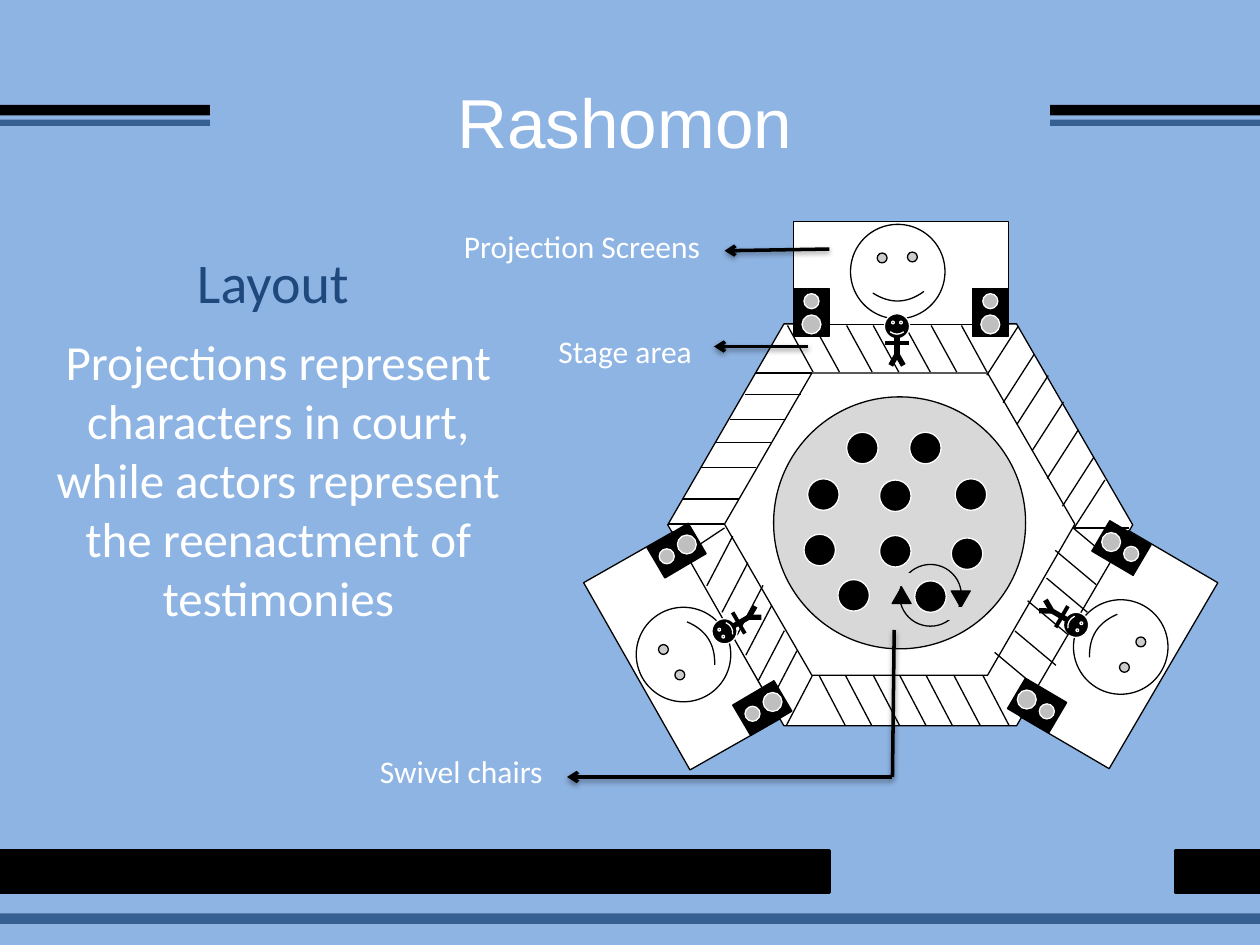
from math import cos, radians, sin

from lxml import etree
from pptx import Presentation
from pptx.dml.color import RGBColor
from pptx.enum import shapes, text
from pptx.oxml import ns
from pptx.util import Pt

COLORS = {
    "sky": "8EB4E3", "blue": "376092", "navy": "1F497D", "black": "000000",
    "white": "FFFFFF", "floor": "D8D8D8", "cone": "BFBFBF",
}
KIND = shapes.MSO_SHAPE

# Hatching of the stage: step of each line, then its starting points
HATCHES = [
    ((-15.1, -28.8), [(x, 414.7) for x in (483.1, 498.2, 514.1, 529.2, 544.3, 560.2, 576.7)]),
    ((14.8, -28.4), [(449.3, 414.7), (440.6, 400.3), (433.4, 388.8), (426.2, 374.4),
                     (421.2, 362.9), (412.6, 349.9), (403.9, 334.8)]),
    ((23.8, -15.8), [(390.2, 317.5)]),
    ((32, 0), [(381.6, 299.5), (390.2, 285.1), (400.3, 267.1), (409, 252.7),
               (416.9, 239.8), (425.5, 225.4), (432, 213.1)]),
    ((14.6, 26.6), [(x, 186) for x in (450, 465.1, 483.8, 499, 517, 532.1, 549.4)]),
    ((-17.9, 27.9), [(581.8, 186.5), (591.1, 202.3), (599, 214.6), (607.7, 229.7),
                     (616.3, 245.5), (625, 261.4), (631.4, 274.3)]),
    ((-31.7, 0), [(645.1, 301.7)]),
    ((-23.4, -19.6), [(637.2, 321.8), (626.4, 334.1), (621.4, 349.9), (610.6, 362.9),
                      (603.4, 380.2), (591.8, 392.4)]),
]
SEATS = [(511.6, 315), (511.6, 283.3), (554.8, 282.6), (470.5, 282.6), (528.8, 256),
         (492.8, 256), (552.6, 316.4), (468.4, 314.3), (531.7, 340.9), (487.8, 340.2)]

# Stations: centre and angle of screen, face and actor, then the speakers
RIGHT = dict(screen=(639.4, 371.2, 210.3), face=(640.4, 369.7, 122.8),
             actor=(614.9, 357.1, 120), speakers=[(592.6, 403.2), (640.8, 313.2)], tilt=120.5)
LEFT = dict(screen=(389.5, 371.9, 150.4), face=(390.6, 374, 237.2),
            actor=(414, 360.7, 240), speakers=[(386.6, 314.6), (435.6, 404.6)], tilt=239.5)
TOP = dict(screen=(514.8, 155.9, 90), face=(513, 155.2, 358.1),
           actor=(512.6, 186.5, 0), speakers=[(565.9, 178.6), (463.7, 178.6)], tilt=0)


def rgb(name):
    return RGBColor.from_string(COLORS[name])


def add_shape(s, kind, cx, cy, w, h, fill=None, line="black", width=0.75, angle=0):
    """Add a preset shape around its centre."""
    sp = s.shapes.add_shape(kind, Pt(cx - w / 2), Pt(cy - h / 2), Pt(w), Pt(h))
    sp.shadow.inherit = False
    sp.rotation = angle
    if fill:
        sp.fill.solid()
        sp.fill.fore_color.rgb = rgb(fill)
    else:
        sp.fill.background()
    if line:
        sp.line.color.rgb = rgb(line)
        sp.line.width = Pt(width)
    else:
        sp.line.fill.background()
    return sp


def add_bar(s, x, y, w, h, fill, line=None):
    add_shape(s, KIND.RECTANGLE, x + w / 2, y + h / 2, w, h, fill, line, 2)


def add_circle(s, cx, cy, d, fill, line="white"):
    add_shape(s, KIND.OVAL, cx, cy, d, d, fill, line)


def add_hexagon(s, cx, cy, w, h, fill=None):
    sp = add_shape(s, KIND.HEXAGON, cx, cy, w, h, fill, angle=180)
    sp.adjustments[0] = 0.289


def add_line(s, start, end, width=0.75):
    """Add a black line and return it with its empty effect list."""
    c = s.shapes.add_connector(shapes.MSO_CONNECTOR.STRAIGHT, *map(Pt, (*start, *end)))
    c.line.color.rgb = rgb("black")
    c.line.width = Pt(width)
    return c, etree.SubElement(c._element.spPr, ns.qn("a:effectLst"))


def add_pointer(s, start, end, arrow=True):
    """Add a line with a soft shadow and, if asked, an arrowhead."""
    c, effects = add_line(s, start, end, 2)
    if arrow:
        ln = c._element.spPr.find(ns.qn("a:ln"))
        etree.SubElement(ln, ns.qn("a:tailEnd"), type="arrow")
    shadow = etree.SubElement(effects, ns.qn("a:outerShdw"), blurRad=str(Pt(3.1)),
                              dist=str(Pt(1.6)), dir="5400000", rotWithShape="0")
    color = etree.SubElement(shadow, ns.qn("a:srgbClr"), val=COLORS["black"])
    etree.SubElement(color, ns.qn("a:alpha"), val="38000")


def add_text(s, words, x, y, w, h, size, color="white", font="Calibri",
             align=text.PP_ALIGN.CENTER, wrap=True, anchor=text.MSO_ANCHOR.TOP):
    tf = s.shapes.add_textbox(Pt(x), Pt(y), Pt(w), Pt(h)).text_frame
    tf.word_wrap = wrap
    tf.vertical_anchor = anchor
    p = tf.paragraphs[0]
    p.text = words
    p.alignment = align
    r = p.runs[0]
    r.font.size = Pt(size)
    r.font.name = font
    r.font.color.rgb = rgb(color)


def turn(cx, cy, dx, dy, angle):
    """Turn an offset about a centre."""
    a = radians(angle)
    return cx + dx * cos(a) - dy * sin(a), cy + dx * sin(a) + dy * cos(a)


def add_actor(s, cx, cy, angle):
    add_shape(s, KIND.SMILEY_FACE, cx, cy, 14.4, 14.4, "black", "white", angle=angle)
    limbs = [((0, 5), (0, 16.6), 3), ((7, 9.4), (-7, 9.4), 2.25),
             ((0, 16), (3.6, 22.3), 3), ((0, 16), (-3.6, 22.3), 3)]
    for start, end, width in limbs:
        add_line(s, turn(cx, cy, *start, angle), turn(cx, cy, *end, angle), width)


def add_speaker(s, cx, cy, angle):
    add_shape(s, KIND.RECTANGLE, cx, cy, 20.2, 27.4, "black", angle=angle)
    for dy, d in ((-6.5, 8.6), (6.8, 10.8)):
        add_circle(s, *turn(cx, cy, 0, dy, angle), d, "cone")


def add_station(s, screen, face, actor, speakers, tilt):
    x, y, angle = screen
    add_shape(s, KIND.RECTANGLE, x, y, 59, 123.1, "white", angle=angle)
    x, y, angle = face
    add_shape(s, KIND.SMILEY_FACE, x, y, 54, 54, "white", angle=angle)
    add_actor(s, *actor)
    for x, y in speakers:
        add_speaker(s, x, y, tilt)


def add_swivel(s):
    """Add the two turning arrows around one chair."""
    add_circle(s, 531.7, 340.2, 35.3, None, "black")
    for x, y, angle in ((549, 342.4, 180), (515.2, 340.2, 0)):
        add_shape(s, KIND.ISOSCELES_TRIANGLE, x, y, 10.8, 9.4, "black", angle=angle)
    for x, y, w in ((547.6, 350.6, 15.1), (510.8, 331.2, 20.9)):
        add_shape(s, KIND.RECTANGLE, x, y, w, 7.2, "floor", "floor")


def main():
    prs = Presentation()
    prs.slide_width, prs.slide_height = Pt(720), Pt(540)
    s = prs.slides.add_slide(prs.slide_layouts[6])
    s.background.fill.solid()
    s.background.fill.fore_color.rgb = rgb("sky")

    # Frame bars
    add_bar(s, 0, 486, 474, 24, "black", "black")
    add_bar(s, 672, 486, 48, 24, "black", "black")
    add_bar(s, 0, 522, 720, 6, "blue")
    for x in (0, 600):
        add_bar(s, x, 60, 120, 6, "black")
        add_bar(s, x, 68.4, 120, 3.6, "blue")

    # Headings
    add_text(s, "Rashomon", 138, 42, 438, 54, 39.6, font="Arial",
             anchor=text.MSO_ANCHOR.MIDDLE)
    add_text(s, "Layout", 66, 138, 180, 46, 32, "navy")

    # Theatre plan
    add_hexagon(s, 514.4, 299.9, 265.7, 229.7, "white")
    add_station(s, **RIGHT)
    add_circle(s, 514.1, 298.8, 144, "floor", "black")
    for x, y in SEATS:
        add_circle(s, x, y, 18, "black")
    for (dx, dy), starts in HATCHES:
        for x, y in starts:
            add_line(s, (x, y), (x + dx, y + dy))
    add_station(s, **LEFT)
    add_station(s, **TOP)
    add_hexagon(s, 514.1, 299.5, 200.2, 172.8)
    add_swivel(s)

    # Labels and pointers
    for words, x, y, w in (("Projection Screens", 258, 126, 151),
                           ("Swivel chairs", 210, 426, 109),
                           ("Stage area", 312, 186, 91)):
        add_text(s, words, x, y, w, 29, 18, align=text.PP_ALIGN.LEFT, wrap=False)
    add_pointer(s, (474, 142.3), (414, 143.3))
    add_pointer(s, (462, 198), (408, 198))
    add_pointer(s, (510, 444), (324, 444))
    add_pointer(s, (510, 444), (511, 360), arrow=False)

    # Description
    add_text(s, "Projections represent characters in court, while actors represent "
             "the reenactment of testimonies", 18, 186, 282, 177, 28)
    prs.save("out.pptx")


if __name__ == "__main__":
    main()
